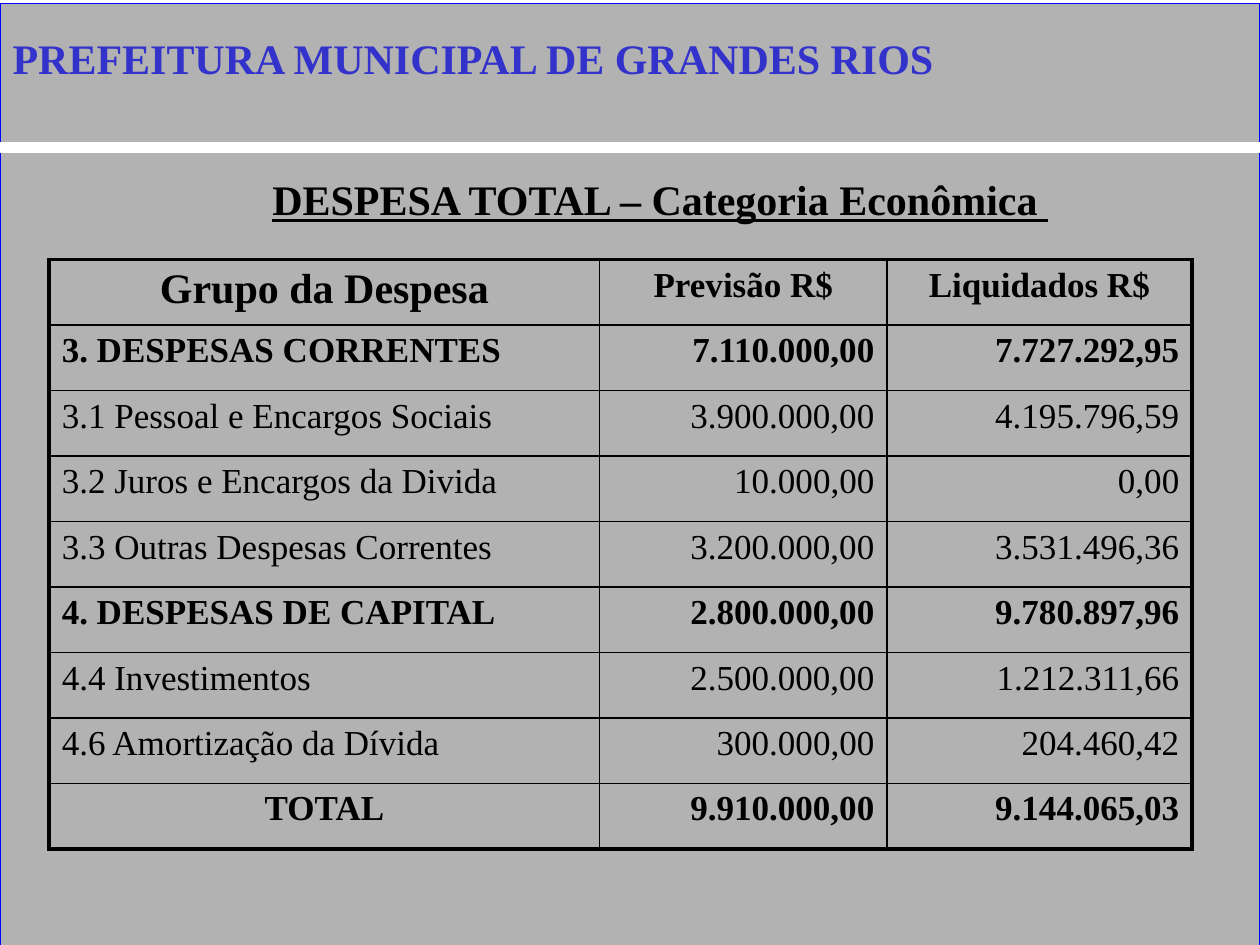
import pptx
import pptx.util
import pptx.dml.color
import pptx.enum.shapes
import pptx.enum.text
import pptx.oxml
import pptx.oxml.ns

Inches, Pt = pptx.util.Inches, pptx.util.Pt
RGBColor = pptx.dml.color.RGBColor
Align = pptx.enum.text.PP_ALIGN

# Content
HEADING = "PREFEITURA MUNICIPAL DE GRANDES RIOS"
SUBHEADING = "DESPESA TOTAL – Categoria Econômica "
EXPENSES = [
    ("Grupo da Despesa", "Previsão R$", "Liquidados R$"),
    ("3. DESPESAS CORRENTES", "7.110.000,00", "7.727.292,95"),
    ("3.1 Pessoal e Encargos Sociais", "3.900.000,00", "4.195.796,59"),
    ("3.2 Juros e Encargos da Divida", "10.000,00", "0,00"),
    ("3.3 Outras Despesas Correntes", "3.200.000,00", "3.531.496,36"),
    ("4. DESPESAS DE CAPITAL", "2.800.000,00", "9.780.897,96"),
    ("4.4 Investimentos", "2.500.000,00", "1.212.311,66"),
    ("4.6 Amortização da Dívida", "300.000,00", "204.460,42"),
    ("TOTAL", "9.910.000,00", "9.144.065,03"),
]
BOLD_ROWS = {0, 1, 5, 8}
COLUMN_WIDTHS = (4.37, 2.28, 2.42)
ROW_HEIGHT = 0.52

# Style
FONT = "Times New Roman"
BLACK = RGBColor(0x00, 0x00, 0x00)
WHITE = RGBColor(0xFF, 0xFF, 0xFF)
GRAY = RGBColor(0xB2, 0xB2, 0xB2)
SHADOW = RGBColor(0x80, 0x80, 0x80)
BLUE = RGBColor(0x00, 0x00, 0xFF)
INDIGO = RGBColor(0x33, 0x33, 0xCC)
NS = pptx.oxml.ns.nsdecls("a")


def write(frame, text, size, align=Align.LEFT, color=BLACK, bold=True):
    frame.text = text
    paragraph = frame.paragraphs[0]
    paragraph.alignment = align
    font = paragraph.runs[0].font
    font.name, font.size, font.bold = FONT, Pt(size), bold
    font.color.rgb = color
    return paragraph.runs[0]


def set_borders(cell, widths):
    """Add cell borders; widths maps the sides L, R, T, B to points."""
    properties = cell._tc.get_or_add_tcPr()
    for side, points in widths.items():
        properties.append(pptx.oxml.parse_xml(
            f'<a:ln{side} {NS} w="{Pt(points)}"><a:solidFill>'
            f'<a:srgbClr val="{BLACK}"/></a:solidFill></a:ln{side}>'))


def fit_heading(shape, left, top, width):
    shape.left, shape.top = Inches(left), Inches(top)
    shape.width, shape.height = Inches(width), Inches(0.5)
    frame = shape.text_frame
    frame.word_wrap = True
    frame.auto_size = pptx.enum.text.MSO_AUTO_SIZE.SHAPE_TO_FIT_TEXT
    frame.vertical_anchor = pptx.enum.text.MSO_ANCHOR.TOP
    return frame


deck = pptx.Presentation()
deck.slide_width, deck.slide_height = Inches(10), Inches(7.5)
slide = deck.slides.add_slide(deck.slide_layouts[5])
shapes = slide.shapes

# Gray panel
panel = shapes.add_shape(pptx.enum.shapes.MSO_SHAPE.RECTANGLE,
                         0, Inches(0.03), deck.slide_width, deck.slide_height)
panel.shadow.inherit = False
panel.fill.solid()
panel.fill.fore_color.rgb = GRAY
panel.line.color.rgb = BLUE
panel.line.width = Pt(0.75)

# White divider
divider = shapes.add_connector(pptx.enum.shapes.MSO_CONNECTOR.STRAIGHT,
                               0, Inches(1.17), deck.slide_width, Inches(1.17))
divider.line.color.rgb = WHITE
divider.line.width = Pt(6)
divider._element.spPr.append(pptx.oxml.parse_xml(f"<a:effectLst {NS}/>"))

# Subheading
subheading = shapes.add_textbox(0, 0, 0, 0)
subheading_run = write(fit_heading(subheading, 1.38, 1.33, 7.72),
                       SUBHEADING, 24, Align.CENTER)
subheading_run.font.underline = True

# Title, raised above the panel, with shadowed letters
title = shapes.title
title_run = write(fit_heading(title, 0, 0.21, 9.49), HEADING, 24, color=INDIGO)
title_run.font.fill._xPr.find(pptx.oxml.ns.qn("a:solidFill")).addnext(
    pptx.oxml.parse_xml(
        f'<a:effectLst {NS}><a:outerShdw dist="{Pt(2)}" dir="2700000">'
        f'<a:srgbClr val="{SHADOW}"/></a:outerShdw></a:effectLst>'))
title._element.getparent().append(title._element)

# Expense table
last_row, last_column = len(EXPENSES) - 1, len(COLUMN_WIDTHS) - 1
table = shapes.add_table(
    len(EXPENSES), len(COLUMN_WIDTHS), Inches(0.39), Inches(2.06),
    Inches(sum(COLUMN_WIDTHS)), Inches(ROW_HEIGHT * len(EXPENSES))).table
table.first_row = table.horz_banding = False
for column, width in zip(table.columns, COLUMN_WIDTHS):
    column.width = Inches(width)
for r, values in enumerate(EXPENSES):
    table.rows[r].height = Inches(ROW_HEIGHT)
    for c, value in enumerate(values):
        cell = table.cell(r, c)
        if r == 0 or (r == last_row and c == 0):
            align = Align.CENTER
        else:
            align = Align.RIGHT if c else Align.LEFT
        write(cell.text_frame, value, 24 if r == c == 0 else 20, align,
              bold=r in BOLD_ROWS)
        outer = {"L": c == 0, "R": c == last_column,
                 "T": r == 0, "B": r == last_row}
        set_borders(cell, {side: 2.25 if edge else 1
                           for side, edge in outer.items()})
        cell.fill.background()

deck.save("out.pptx")
